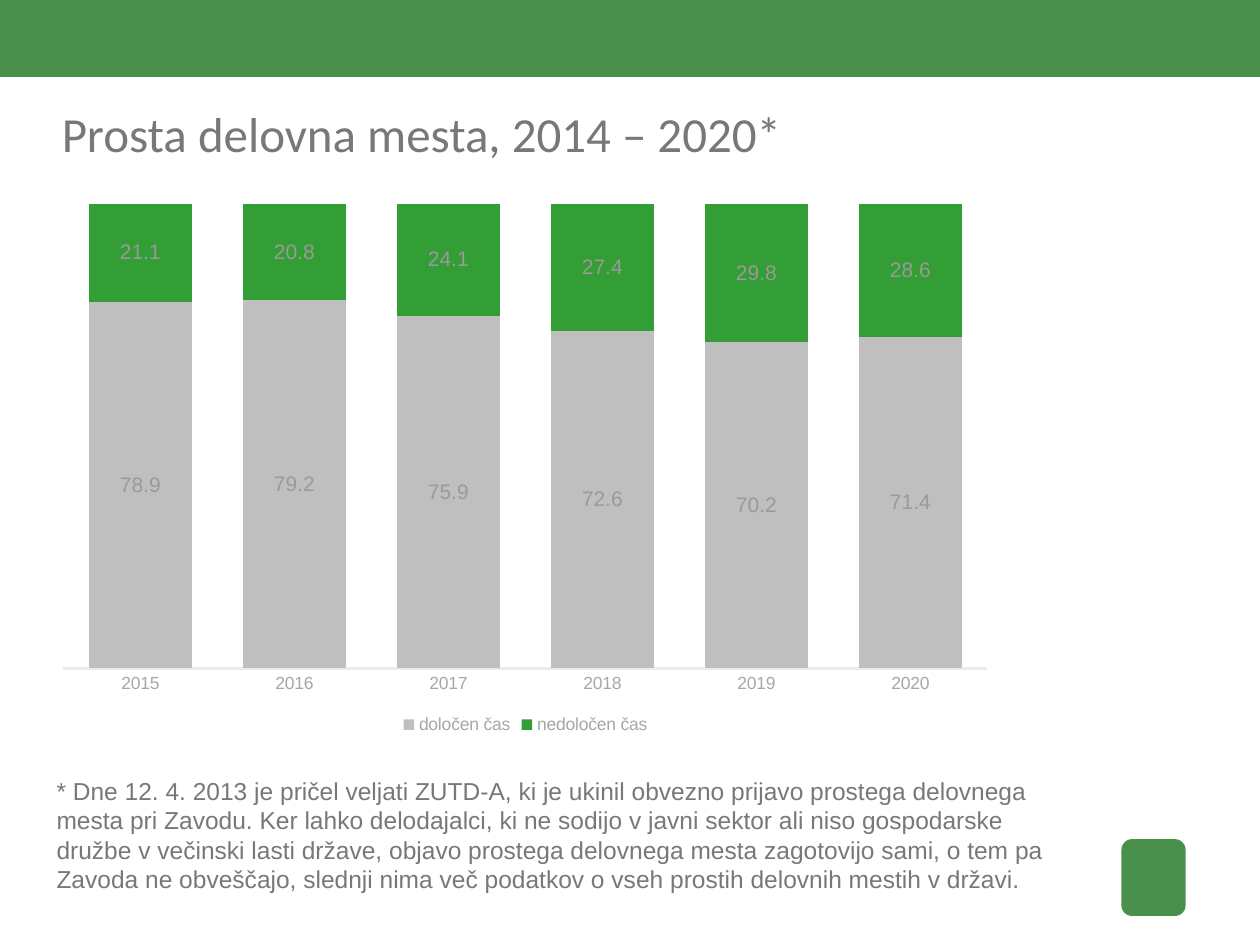
"""Build a slide on vacancies by type of employment contract."""
from dataclasses import dataclass

from lxml import etree
from pptx import Presentation
from pptx import util as u
from pptx.chart.data import CategoryChartData
from pptx.dml.color import RGBColor
from pptx.enum import chart as ch, shapes, text
from pptx.oxml.ns import qn

COLORS = {
    "brand": "49904D",
    "text": "797777",
    "axis_text": "A8A7A7",
    "label": "9B9999",
    "axis_line": "EBEBEB",
    "fixed": "BFBFBF",
    "permanent": "339E35",
    "paper": "FFFFFF",
}
YEARS = ["2015", "2016", "2017", "2018", "2019", "2020"]
PLOT_AREA = {"x": 0.02, "y": 0.02, "w": 0.96, "h": 0.85}
TITLE = "Prosta delovna mesta, 2014 – 2020*"
FOOTNOTE = (
    "* Dne 12. 4. 2013 je pričel veljati ZUTD-A, ki je ukinil obvezno prijavo "
    "prostega delovnega mesta pri Zavodu. Ker lahko delodajalci, ki ne sodijo v "
    "javni sektor ali niso gospodarske družbe v večinski lasti države, objavo "
    "prostega delovnega mesta zagotovijo sami, o tem pa Zavoda ne obveščajo, "
    "slednji nima več podatkov o vseh prostih delovnih mestih v državi."
)


@dataclass(frozen=True)
class Box:
    left: float
    top: float
    width: float
    height: float

    def lengths(self) -> tuple:
        return tuple(map(u.Inches, (self.left, self.top, self.width, self.height)))


@dataclass(frozen=True)
class Block:
    box: Box
    shape: shapes.MSO_SHAPE


@dataclass(frozen=True)
class Contract:
    name: str
    shares: tuple
    color: str


BLOCKS = [
    Block(Box(0, -0.01, 10, 0.62), shapes.MSO_SHAPE.RECTANGLE),
    Block(Box(8.9, 6.66, 0.51, 0.61), shapes.MSO_SHAPE.ROUNDED_RECTANGLE),
]
CONTRACTS = [
    Contract("določen čas", (78.9, 79.2, 75.9, 72.6, 70.2, 71.4), "fixed"),
    Contract("nedoločen čas", (21.1, 20.8, 24.1, 27.4, 29.8, 28.6), "permanent"),
]


def rgb(key: str) -> RGBColor:
    return RGBColor.from_string(COLORS[key])


def style_font(font, size: float, color: str, name: str = "Arial") -> None:
    font.size, font.name = u.Pt(size), name
    font.color.rgb = rgb(color)


def paint(fill, color: str) -> None:
    fill.solid()
    fill.fore_color.rgb = rgb(color)


def add_block(slide, block: Block) -> None:
    shape = slide.shapes.add_shape(block.shape, *block.box.lengths())
    shape.shadow.inherit = False
    paint(shape.fill, "brand")
    shape.line.fill.background()


def write(frame, wording: str, size: float, font_name: str) -> None:
    frame.word_wrap = True
    frame.vertical_anchor = text.MSO_ANCHOR.TOP
    paragraph = frame.paragraphs[0]
    paragraph.alignment = text.PP_ALIGN.LEFT
    run = paragraph.add_run()
    run.text = wording
    style_font(run.font, size, "text", font_name)


def add_title(slide, box: Box) -> None:
    title = slide.shapes.title
    title.left, title.top, title.width, title.height = box.lengths()
    frame = title.text_frame
    frame.auto_size = text.MSO_AUTO_SIZE.NONE
    frame.margin_left = frame.margin_right = frame.margin_top = frame.margin_bottom = 0
    write(frame, TITLE, 28, "Calibri")


def place_plot(chart) -> None:
    plot_area = chart.element.find(".//" + qn("c:plotArea"))
    for old_layout in plot_area.findall(qn("c:layout")):
        plot_area.remove(old_layout)
    layout = etree.Element(qn("c:layout"))
    manual = etree.SubElement(layout, qn("c:manualLayout"))
    settings = {"layoutTarget": "inner", "xMode": "edge", "yMode": "edge", **PLOT_AREA}
    for tag, value in settings.items():
        etree.SubElement(manual, qn(f"c:{tag}")).set("val", str(value))
    plot_area.insert(0, layout)


def style_axes(chart) -> None:
    years, shares = chart.category_axis, chart.value_axis
    for axis in (years, shares):
        axis.major_tick_mark = axis.minor_tick_mark = ch.XL_TICK_MARK.NONE
        axis.has_major_gridlines = False
        style_font(axis.tick_labels.font, 10, "axis_text")
    years.format.line.color.rgb = rgb("axis_line")
    years.format.line.width = u.Pt(1.5)
    shares.format.line.fill.background()
    shares.tick_label_position = ch.XL_TICK_LABEL_POSITION.NONE
    shares.minimum_scale, shares.maximum_scale = 0, 100


def add_chart(slide, box: Box) -> None:
    data = CategoryChartData(number_format="#,##0.0")
    data.categories = YEARS
    for contract in CONTRACTS:
        data.add_series(contract.name, contract.shares)
    chart = slide.shapes.add_chart(
        ch.XL_CHART_TYPE.COLUMN_STACKED, *box.lengths(), data
    ).chart
    style_font(chart.font, 10, "text")
    chart.has_title = False
    chart.has_legend = True
    chart.legend.position = ch.XL_LEGEND_POSITION.BOTTOM
    chart.legend.include_in_layout = False
    style_font(chart.legend.font, 10, "axis_text")
    style_axes(chart)
    plot = chart.plots[0]
    plot.gap_width, plot.overlap, plot.vary_by_categories = 50, 100, False
    for series, contract in zip(plot.series, CONTRACTS):
        paint(series.format.fill, contract.color)
        labels = series.data_labels
        labels.show_value = True
        labels.number_format = "#,##0.0"
        labels.number_format_is_linked = False
        style_font(labels.font, 12, "label")
    place_plot(chart)


def main() -> None:
    deck = Presentation()
    deck.slide_width, deck.slide_height = u.Inches(10), u.Inches(7.5)
    slide = deck.slides.add_slide(deck.slide_layouts.get_by_name("Title Only"))
    paint(slide.background.fill, "paper")
    for block in BLOCKS:
        add_block(slide, block)
    add_title(slide, Box(0.49, 0.82, 9.26, 0.71))
    footnote = slide.shapes.add_textbox(*Box(0.35, 6.11, 8.35, 1.04).lengths())
    write(footnote.text_frame, FOOTNOTE, 14, "Arial")
    footnote.text_frame.auto_size = text.MSO_AUTO_SIZE.SHAPE_TO_FIT_TEXT
    add_chart(slide, Box(0.35, 1.53, 7.64, 4.34))
    deck.save("out.pptx")


if __name__ == "__main__":
    main()
